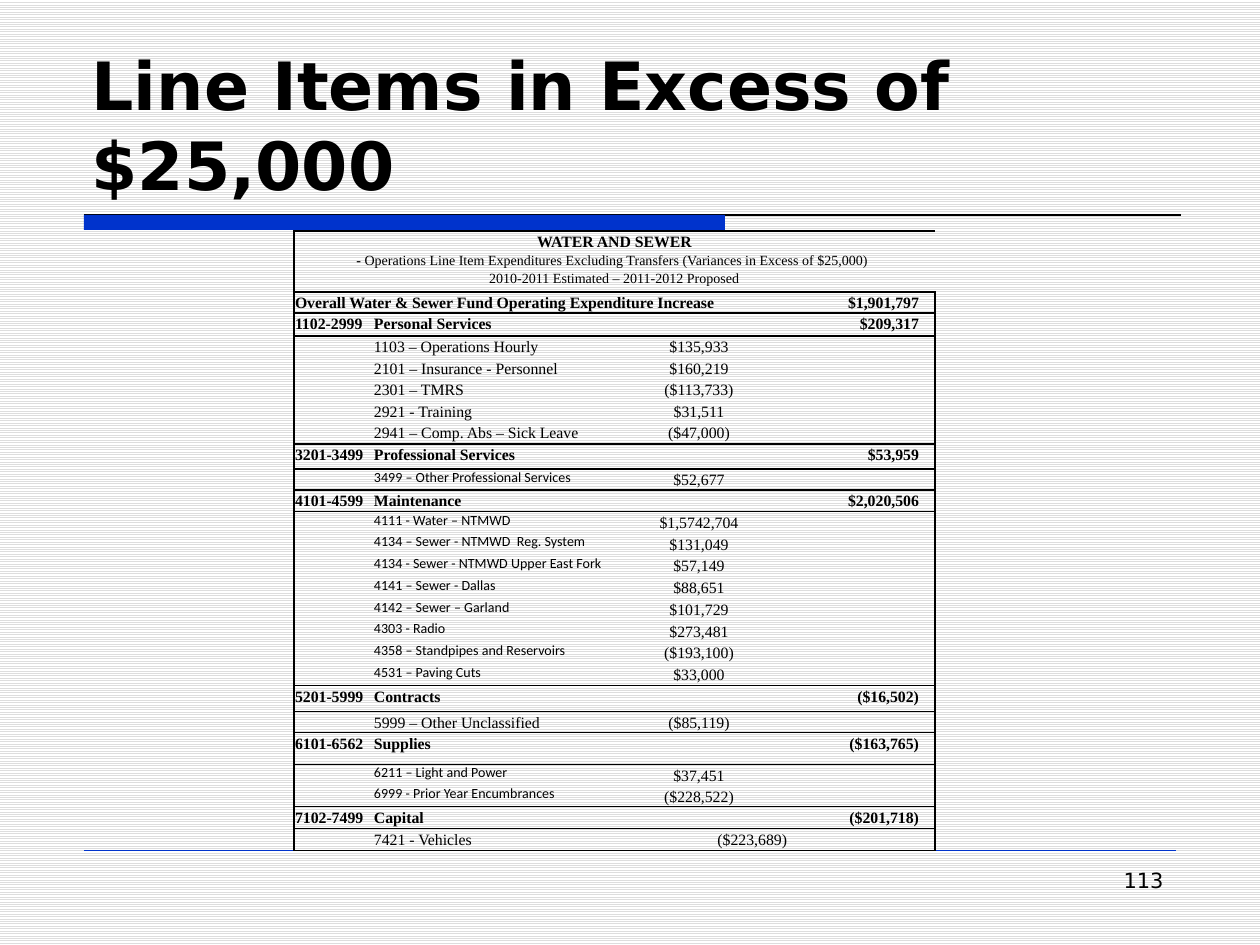
import pptx
import pptx.util
import pptx.dml.color
import pptx.enum.dml
import pptx.enum.shapes
import pptx.enum.text
import pptx.oxml
import pptx.oxml.ns

PX = 914400 / 126
COLORS = {"ink": "000000", "blue": "0033CC", "stripe": "DDDDDD", "paper": "FFFFFF"}
SANS, SERIF, BODY = "DejaVu Sans", "Times New Roman", "Calibri"
ALIGN = pptx.enum.text.PP_ALIGN
COLUMNS = [79, 237, 178, 132, 15]
HEADING_H, OVERALL_H = 61, 21
NO_STYLE = "{2D5ABB26-0587-4C30-8999-92F81FD0307C}"
SECTIONS = [
    ("1102-2999", "Personal Services", "$209,317", 23, 108, SERIF, [
        ("1103 – Operations Hourly", "$135,933"),
        ("2101 – Insurance - Personnel", "$160,219"),
        ("2301 – TMRS", "($113,733)"),
        ("2921 - Training", "$31,511"),
        ("2941 – Comp. Abs – Sick Leave", "($47,000)")]),
    ("3201-3499", "Professional Services", "$53,959", 25, 21, BODY, [
        ("3499 – Other Professional Services", "$52,677")]),
    ("4101-4599", "Maintenance", "$2,020,506", 22, 174, BODY, [
        ("4111 - Water – NTMWD", "$1,5742,704"),
        ("4134 – Sewer - NTMWD  Reg. System", "$131,049"),
        ("4134 - Sewer - NTMWD Upper East Fork", "$57,149"),
        ("4141 – Sewer - Dallas", "$88,651"),
        ("4142 – Sewer – Garland", "$101,729"),
        ("4303 - Radio", "$273,481"),
        ("4358 – Standpipes and Reservoirs", "($193,100)"),
        ("4531 – Paving Cuts", "$33,000")]),
    ("5201-5999", "Contracts", "($16,502)", 26, 21, SERIF, [
        ("5999 – Other Unclassified", "($85,119)")]),
    ("6101-6562", "Supplies", "($163,765)", 32, 42, BODY, [
        ("6211 – Light and Power", "$37,451"),
        ("6999 - Prior Year Encumbrances", "($228,522)")]),
    ("7102-7499", "Capital", "($201,718)", 22, 22, SERIF, [
        ("7421 - Vehicles", "($223,689)")]),
]


def px(n):
    """Turn pixels into EMU."""
    return pptx.util.Emu(round(n * PX))


def rgb(name):
    """Look up a named colour."""
    return pptx.dml.color.RGBColor.from_string(COLORS[name])


def write(tf, text, size=9, font=SERIF, bold=False, align=ALIGN.LEFT, spacing=1.15, p=None):
    """Add a formatted run in a new paragraph, or in the given one."""
    if p is None:
        p = tf.add_paragraph() if tf.paragraphs[0].runs else tf.paragraphs[0]
    p.alignment = align
    p.line_spacing = spacing
    r = p.add_run()
    r.text = text
    r.font.size = pptx.util.Pt(size)
    r.font.name = font
    r.font.bold = bold
    r.font.color.rgb = rgb("ink")
    return p


def add_rule(slide, x1, x2, y, color, width):
    """Draw a horizontal line."""
    line = slide.shapes.add_connector(
        pptx.enum.shapes.MSO_CONNECTOR.STRAIGHT, px(x1), px(y), px(x2), px(y))
    line.line.color.rgb = rgb(color)
    line.line.width = pptx.util.Pt(width)
    line._element.spPr.append(pptx.oxml.parse_xml(
        f'<a:effectLst {pptx.oxml.ns.nsdecls("a")}/>'))


def add_decoration(slide, x, y, w, h):
    """Draw the striped background, the bar under the title and the footer rule."""
    fill = slide.background.fill
    fill.patterned()
    fill.pattern = pptx.enum.dml.MSO_PATTERN.LIGHT_HORIZONTAL
    fill.fore_color.rgb = rgb("stripe")
    fill.back_color.rgb = rgb("paper")
    add_rule(slide, x, x + w, y, "ink", 0.75)
    bar = slide.shapes.add_shape(
        pptx.enum.shapes.MSO_SHAPE.RECTANGLE, px(x), px(y), px(641), px(15))
    bar.shadow.inherit = False
    bar.fill.solid()
    bar.fill.fore_color.rgb = rgb("blue")
    bar.line.fill.background()
    add_rule(slide, x, x + w - 5, y + h, "blue", 0.25)


def add_title(slide, x, y, w, h):
    """Place and fill the title placeholder."""
    sp = slide.shapes.title
    sp.left, sp.top, sp.width, sp.height = px(x), px(y), px(w), px(h)
    tf = sp.text_frame
    tf.word_wrap = True
    tf.auto_size = pptx.enum.text.MSO_AUTO_SIZE.NONE
    tf.vertical_anchor = pptx.enum.text.MSO_ANCHOR.BOTTOM
    write(tf, "Line Items in Excess of $25,000", size=38, font=SANS, bold=True, spacing=1.0)


def add_page_number(slide, x, y, w, h):
    """Place the page number."""
    tf = slide.shapes.add_textbox(px(x), px(y), px(w), px(h)).text_frame
    tf.word_wrap = True
    write(tf, "113", size=12, font=SANS, align=ALIGN.RIGHT, spacing=1.0)


def finish_cell(cell, sides):
    """Set margins, clear the fill and draw the named borders."""
    cell.margin_left = cell.margin_right = px(1)
    cell.margin_top = cell.margin_bottom = 0
    tcPr = cell._tc.get_or_add_tcPr()
    for side in "LRTB":
        paint = (f'<a:solidFill><a:srgbClr val="{COLORS["ink"]}"/></a:solidFill>'
                 if side in sides else "<a:noFill/>")
        tcPr.append(pptx.oxml.parse_xml(
            f'<a:ln{side} {pptx.oxml.ns.nsdecls("a")} w="12700">{paint}</a:ln{side}>'))
    cell.fill.background()
    p = cell.text_frame.paragraphs[0]
    if not p.runs:
        p._p.append(pptx.oxml.parse_xml(
            f'<a:endParaRPr {pptx.oxml.ns.nsdecls("a")} sz="800"/>'))


def finish_row(table, row, top=True, bottom=True):
    """Finish the cells of a row, with outer sides and optional horizontal lines."""
    last = len(COLUMNS) - 1
    for col in range(last + 1):
        sides = "T" * top + "B" * bottom + "L" * (col == 0) + "R" * (col == last)
        finish_cell(table.cell(row, col), sides)


def add_heading(table):
    """Fill the merged heading row and the overall total row."""
    table.cell(0, 0).merge(table.cell(0, len(COLUMNS) - 1))
    tf = table.cell(0, 0).text_frame
    write(tf, "WATER AND SEWER", bold=True, align=ALIGN.CENTER)
    p = write(tf, "- ", size=8, bold=True, align=ALIGN.CENTER)
    write(tf, "Operations Line Item Expenditures Excluding Transfers "
          "(Variances in Excess of $25,000) ", size=8, align=ALIGN.CENTER, p=p)
    write(tf, "2010-2011 Estimated – 2011-2012 Proposed", size=8, align=ALIGN.CENTER)
    table.cell(1, 0).merge(table.cell(1, 2))
    write(table.cell(1, 0).text_frame,
          "Overall Water & Sewer Fund Operating Expenditure Increase", bold=True)
    write(table.cell(1, 3).text_frame, "$1,901,797", bold=True, align=ALIGN.RIGHT)
    for row in range(2):
        finish_row(table, row)


def add_section(table, row, section):
    """Fill a section's total row and its line items; return the next row."""
    code, name, total, total_h, items_h, font, items = section
    table.rows[row].height = px(total_h)
    for col, text in ((0, code), (1, name), (3, total)):
        write(table.cell(row, col).text_frame, text, bold=True,
              align=ALIGN.RIGHT if col == 3 else ALIGN.LEFT)
    finish_row(table, row)
    size, spacing = (8, 1.0) if font == BODY else (9, 1.15)
    amount_align = ALIGN.RIGHT if name == "Capital" else ALIGN.CENTER
    for i, (label, amount) in enumerate(items):
        row += 1
        table.rows[row].height = px(items_h / len(items))
        write(table.cell(row, 1).text_frame, label, size=size, font=font, spacing=spacing)
        write(table.cell(row, 2).text_frame, amount, align=amount_align)
        finish_row(table, row, top=i == 0, bottom=i == len(items) - 1)
    return row + 1


def add_expenditures(slide, x, y, w, h):
    """Build the expenditure table."""
    count = 2 + sum(1 + len(section[-1]) for section in SECTIONS)
    frame = slide.shapes.add_table(count, len(COLUMNS), px(x), px(y), px(w), px(h))
    table = frame.table
    table.first_row = table.horz_banding = False
    table._tbl.tblPr.find(pptx.oxml.ns.qn("a:tableStyleId")).text = NO_STYLE
    for column, width in zip(table.columns, COLUMNS):
        column.width = px(width)
    table.rows[0].height, table.rows[1].height = px(HEADING_H), px(OVERALL_H)
    add_heading(table)
    row = 2
    for section in SECTIONS:
        row = add_section(table, row, section)


def main():
    """Build and save the slide."""
    prs = pptx.Presentation()
    prs.slide_width, prs.slide_height = px(1260), px(945)
    slide = prs.slides.add_slide(prs.slide_layouts[5])
    add_decoration(slide, 84, 215, 1097, 635)
    add_title(slide, 79, 42, 1103, 168)
    add_expenditures(slide, 294, 231, sum(COLUMNS), 620)
    add_page_number(slide, 903, 861, 273, 66)
    prs.save("out.pptx")


if __name__ == "__main__":
    main()
